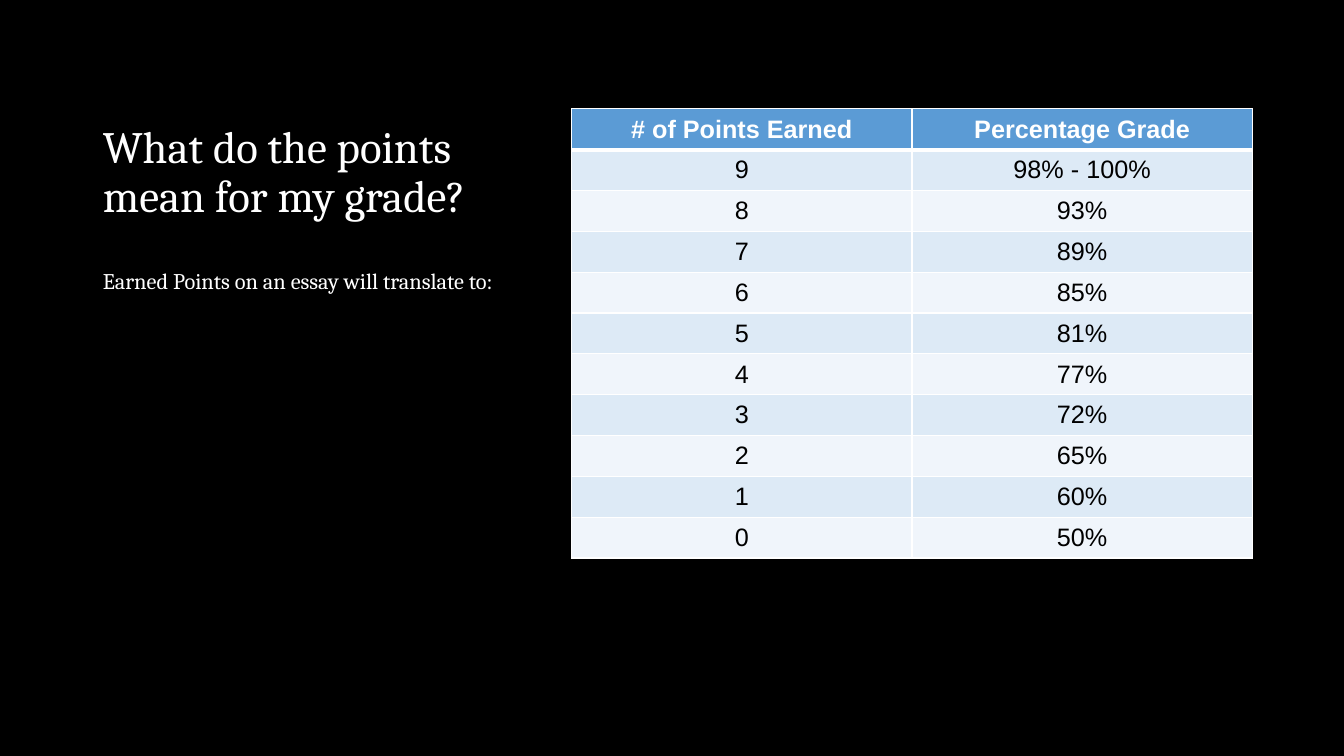
from lxml import etree
from pptx import Presentation
from pptx.dml.color import RGBColor
from pptx.enum.text import MSO_ANCHOR, MSO_AUTO_SIZE, PP_ALIGN
from pptx.oxml.ns import qn
from pptx.util import Inches, Pt

TOP, MIDDLE, BOTTOM = MSO_ANCHOR.TOP, MSO_ANCHOR.MIDDLE, MSO_ANCHOR.BOTTOM
LEFT, CENTER = PP_ALIGN.LEFT, PP_ALIGN.CENTER
NO_AUTOFIT = MSO_AUTO_SIZE.NONE

TITLE = "What do the points mean for my grade?"
CAPTION = "Earned Points on an essay will translate to:"
HEADERS = ("# of Points Earned", "Percentage Grade")
GRADES = ("50%", "60%", "65%", "72%", "77%", "81%", "85%", "89%", "93%", "98% - 100%")
ROWS = [HEADERS] + [(str(points), GRADES[points]) for points in range(9, -1, -1)]

BLACK, WHITE, HEADER_BLUE = "000000", "FFFFFF", "5B9BD5"
BANDS = ("F0F5FB", "DDEAF6")

WIDTH, HEIGHT = 13.33, 7.5
TEXT_LEFT, TEXT_WIDTH = 0.92, 4.3
TITLE_TOP, TITLE_HEIGHT, CAPTION_HEIGHT = 0.5, 1.75, 4.17
TABLE_LEFT, TABLE_TOP = 5.67, 1.08
COLUMN_WIDTH, TABLE_HEIGHT = 3.375, 4.46


def color(value):
    return RGBColor.from_string(value)


def format_text(frame, font, size, value, align, bold=False):
    for para in frame.paragraphs:
        para.alignment = align
        for span in para.runs:
            span.font.name = font
            span.font.size = Pt(size)
            span.font.bold = bold
            span.font.color.rgb = color(value)


def fill_placeholder(box, text, top, height, size, anchor):
    box.left, box.top = Inches(TEXT_LEFT), Inches(top)
    box.width, box.height = Inches(TEXT_WIDTH), Inches(height)
    frame = box.text_frame
    frame.text = text
    frame.word_wrap = True
    frame.auto_size = NO_AUTOFIT
    frame.vertical_anchor = anchor
    frame.paragraphs[0].line_spacing = 0.9
    frame.paragraphs[0].space_before = Pt(0)
    format_text(frame, "Cambria", size, WHITE, LEFT)
    return frame


def set_borders(cell, widths):
    properties = cell._tc.get_or_add_tcPr()
    for place, (side, width) in enumerate(widths.items()):
        line = etree.Element(qn("a:" + side), w=str(Pt(width)))
        fill = etree.SubElement(line, qn("a:solidFill"))
        etree.SubElement(fill, qn("a:srgbClr"), val=WHITE)
        properties.insert(place, line)


def add_grade_table(page):
    table = page.shapes.add_table(
        len(ROWS), len(HEADERS), Inches(TABLE_LEFT), Inches(TABLE_TOP),
        Inches(COLUMN_WIDTH * len(HEADERS)), Inches(TABLE_HEIGHT)).table
    for row, values in enumerate(ROWS):
        header = row == 0
        for column, value in enumerate(values):
            cell = table.cell(row, column)
            cell.text_frame.text = value
            cell.vertical_anchor = MIDDLE
            format_text(cell.text_frame, "Arial", 18, WHITE if header else BLACK, CENTER, header)
            cell.fill.solid()
            cell.fill.fore_color.rgb = color(HEADER_BLUE if header else BANDS[row % 2])
            set_borders(cell, {"lnL": 1, "lnR": 1, "lnT": 3 if row == 1 else 1,
                               "lnB": 3 if header else 1})


def main():
    deck = Presentation()
    deck.slide_width, deck.slide_height = Inches(WIDTH), Inches(HEIGHT)
    page = deck.slides.add_slide(deck.slide_layouts.get_by_name("Content with Caption"))
    page.background.fill.solid()
    page.background.fill.fore_color.rgb = color(BLACK)

    title, content, caption = page.placeholders
    content.element.getparent().remove(content.element)
    fill_placeholder(title, TITLE, TITLE_TOP, TITLE_HEIGHT, 32, BOTTOM)
    add_grade_table(page)
    frame = fill_placeholder(caption, CAPTION, TITLE_TOP + TITLE_HEIGHT, CAPTION_HEIGHT, 16, TOP)
    frame.margin_top = Inches(0.43)
    deck.save("out.pptx")


if __name__ == "__main__":
    main()
